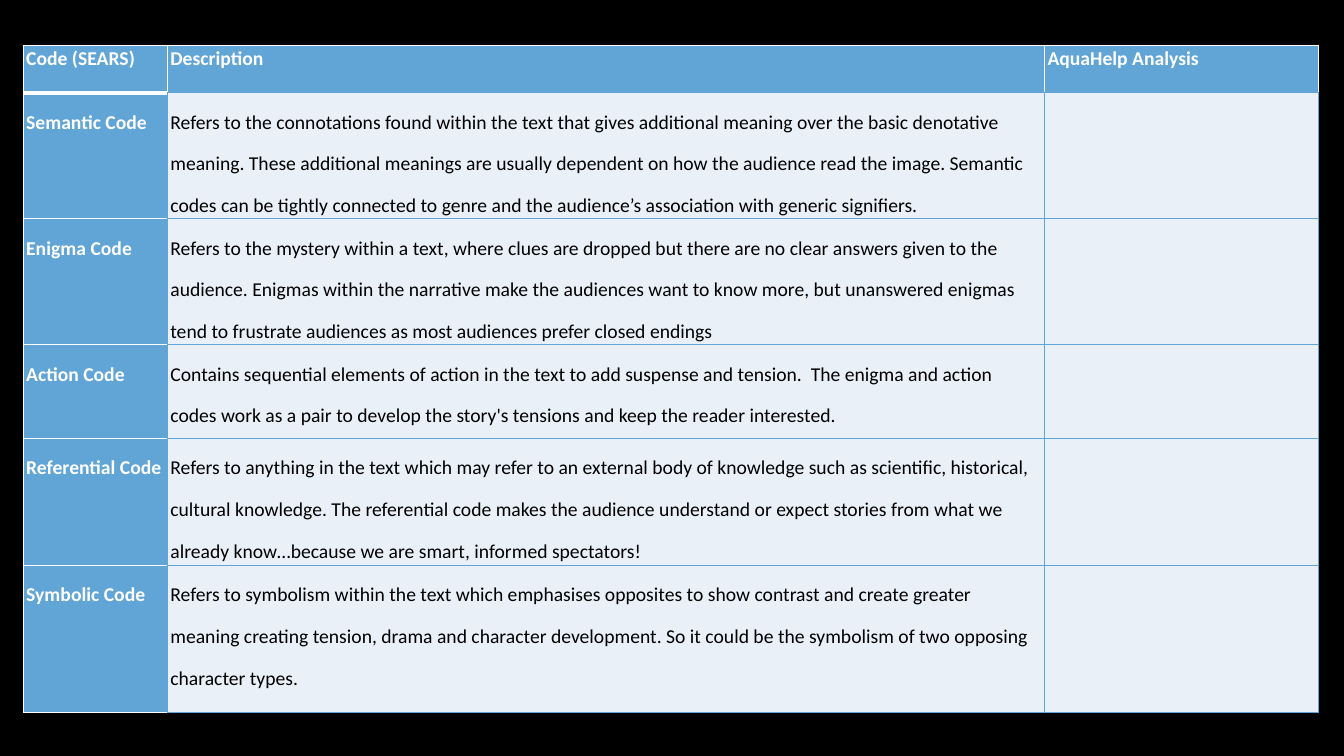
"""Build a slide with a table of the five SEARS narrative codes."""
from lxml import etree
from pptx import Presentation
from pptx.dml.color import RGBColor
from pptx.oxml.ns import qn
from pptx.util import Inches, Pt

BLACK = RGBColor(0x00, 0x00, 0x00)
WHITE = RGBColor(0xFF, 0xFF, 0xFF)
BLUE = RGBColor(0x61, 0xA5, 0xD6)
PALE = RGBColor(0xEA, 0xF0, 0xF7)

COLUMN_WIDTHS = [1.43, 8.7, 2.72]
ROW_HEIGHTS = [0.47, 1.25, 1.25, 0.93, 1.26, 1.46]
CODES = [
    ("Code (SEARS)", "Description", "AquaHelp Analysis"),
    ("Semantic Code",
     "Refers to the connotations found within the text that gives additional meaning "
     "over the basic denotative meaning. These additional meanings are usually dependent "
     "on how the audience read the image. Semantic codes can be tightly connected to "
     "genre and the audience’s association with generic signifiers.", ""),
    ("Enigma Code",
     "Refers to the mystery within a text, where clues are dropped but there are no clear "
     "answers given to the audience. Enigmas within the narrative make the audiences want "
     "to know more, but unanswered enigmas tend to frustrate audiences as most audiences "
     "prefer closed endings", ""),
    ("Action Code",
     "Contains sequential elements of action in the text to add suspense and tension.  The "
     "enigma and action codes work as a pair to develop the story's tensions and keep the "
     "reader interested.", ""),
    ("Referential Code",
     "Refers to anything in the text which may refer to an external body of knowledge such "
     "as scientific, historical, cultural knowledge. The referential code makes the audience "
     "understand or expect stories from what we already know…because we are smart, informed "
     "spectators!", ""),
    ("Symbolic Code",
     "Refers to symbolism within the text which emphasises opposites to show contrast and "
     "create greater meaning creating tension, drama and character development. So it could "
     "be the symbolism of two opposing character types.", ""),
]


def add_border(cell, side, color, points):
    line = etree.SubElement(cell._tc.get_or_add_tcPr(), qn(f"a:ln{side}"), w=str(Pt(points)))
    fill = etree.SubElement(line, qn("a:solidFill"))
    etree.SubElement(fill, qn("a:srgbClr"), val=str(color))


presentation = Presentation()
presentation.slide_width = Inches(13.33)
presentation.slide_height = Inches(7.5)
slide = presentation.slides.add_slide(presentation.slide_layouts[6])
slide.background.fill.solid()
slide.background.fill.fore_color.rgb = BLACK

codes_table = slide.shapes.add_table(
    len(ROW_HEIGHTS), len(COLUMN_WIDTHS), Inches(0.23), Inches(0.45),
    Inches(sum(COLUMN_WIDTHS)), Inches(sum(ROW_HEIGHTS))).table
for column, width in zip(codes_table.columns, COLUMN_WIDTHS):
    column.width = Inches(width)
for row, height in zip(codes_table.rows, ROW_HEIGHTS):
    row.height = Inches(height)

for row_index, code in enumerate(CODES):
    for column_index, wording in enumerate(code):
        cell = codes_table.cell(row_index, column_index)
        in_header = row_index == 0
        in_names = column_index == 0
        is_heading = in_header or in_names

        cell.margin_left = cell.margin_right = Inches(0.03)
        cell.margin_top = cell.margin_bottom = 0
        add_border(cell, "L", WHITE if is_heading else BLUE, 1)
        add_border(cell, "R", WHITE if in_header else BLUE, 1)
        add_border(cell, "T", WHITE if is_heading else BLUE, 1)
        add_border(cell, "B", WHITE if in_names else BLUE, 3 if in_header and in_names else 1)
        cell.fill.solid()
        cell.fill.fore_color.rgb = BLUE if is_heading else PALE

        paragraph = cell.text_frame.paragraphs[0]
        paragraph.text = wording
        paragraph.line_spacing = 1.07 if in_header else 1.75
        paragraph.space_after = Pt(8)
        paragraph.font.size = Pt(14)
        for run in paragraph.runs:
            run.font.name = "Calibri"
            run.font.size = Pt(14)
            run.font.bold = is_heading
            run.font.color.rgb = WHITE if is_heading else BLACK

presentation.save("out.pptx")
